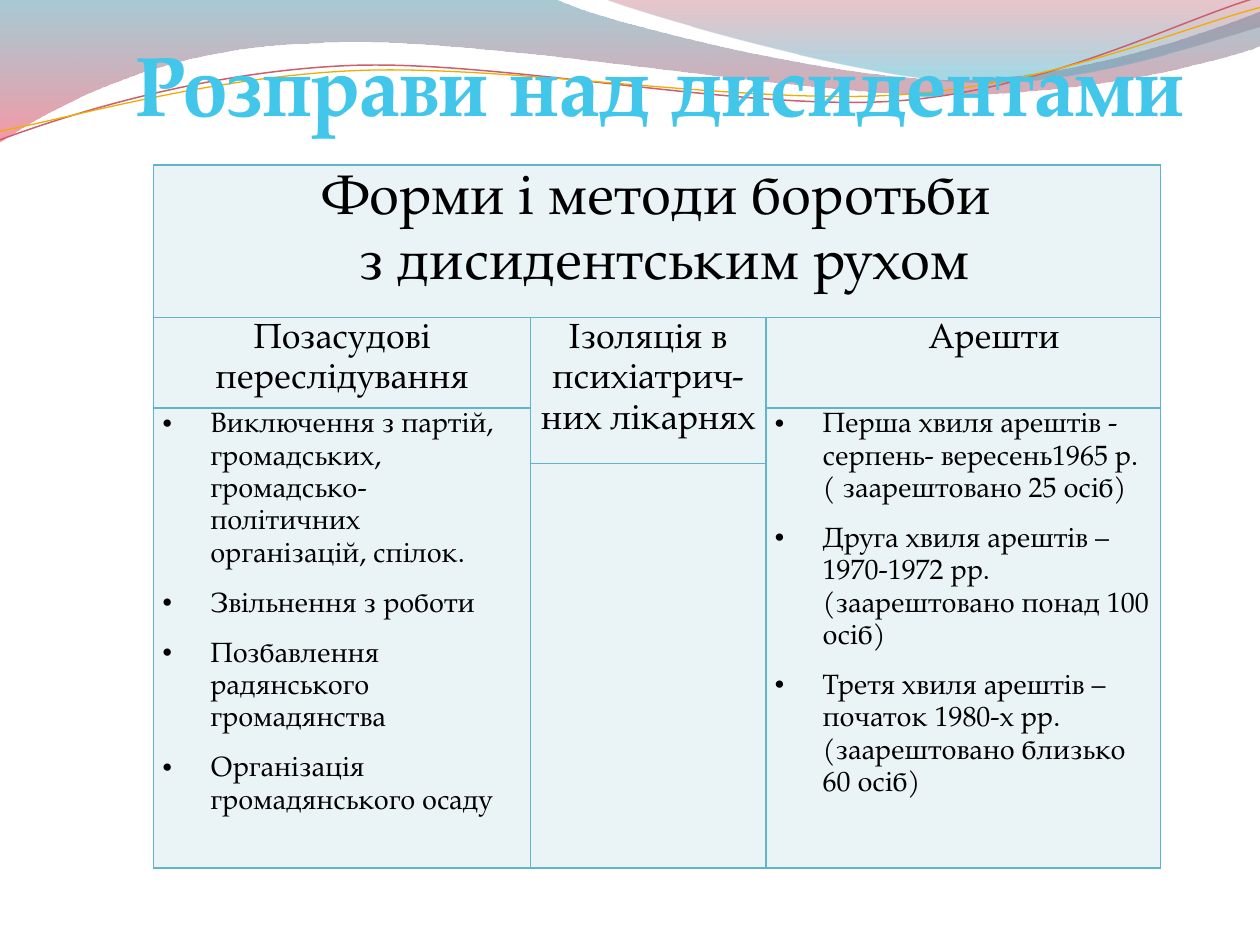
from dataclasses import dataclass
from math import cos, radians, sin

from lxml.etree import SubElement
from pptx import Presentation
from pptx.dml.color import RGBColor
from pptx.enum.text import MSO_ANCHOR, MSO_AUTO_SIZE, PP_ALIGN
from pptx.oxml.ns import qn
from pptx.util import Inches, Pt


@dataclass(frozen=True)
class Theme:
    font: str = "TeX Gyre Pagella"
    title: str = "42C6EA"
    text: str = "000000"
    cell: str = "EAF3F6"
    border: str = "60B5CC"
    title_size: int = 48
    heading_size: int = 32
    column_size: int = 20
    body_size: int = 16


THEME = Theme()
CURVE_TILT = -2.7
CURVE_CENTRE = (4.99, 0.58)

# Each outline is a start point followed by line ends (one point)
# or cubic curves (two control points and an end point).
LEFT_WAVE = [
    (0, 0), [(4.4, -0.01)],
    [(4.76, 0.17), (6.64, 0.63), (7.58, 0.63)],
    [(8.53, 0.63), (9.58, 0.26), (10, 0.09)], [(10.01, 0.36)],
    [(9.83, 0.44), (8.7, 0.76), (7.46, 0.75)],
    [(6.22, 0.75), (3.82, 0.28), (2.57, 0.34)],
    [(1.29, 0.36), (0.46, 0.83), (-0.01, 1.13)], [(0, 0)],
]
RIGHT_WAVE = [
    (4.79, -0.01),
    [(5.09, 0.11), (6.82, 0.62), (7.69, 0.65)],
    [(8.56, 0.69), (9.61, 0.32), (10, 0.21)], [(10, 0)], [(4.79, -0.01)],
]
RED_CURVE = [
    (0, 1.11),
    [(0.48, 0.93), (1.58, 0.57), (2.77, 0.52)],
    [(3.95, 0.47), (5.93, 0.89), (7.13, 0.8)],
    [(8.33, 0.71), (9.38, 0.15), (9.98, -0.02)],
]
GOLD_CURVE = [
    (0, 1.04),
    [(0.47, 0.96), (1.64, 0.61), (2.83, 0.56)],
    [(4.03, 0.51), (5.97, 0.84), (7.17, 0.75)],
    [(8.36, 0.67), (9.41, 0.21), (10, 0.06)],
]

COLUMN_WIDTHS = [2.99, 1.87, 3.13]
ROW_HEIGHTS = [1.21, 0.72, 0.44, 3.21]
MERGES = [((0, 0), (0, 2)), ((1, 1), (2, 1)), ((2, 0), (3, 0)), ((2, 2), (3, 2))]
HEADING = "Форми і методи боротьби\n з дисидентським рухом"
COLUMN_HEADINGS = [
    ("Позасудові переслідування", 0),
    ("Ізоляція в психіатрич-них лікарнях", 0),
    ("Арешти", 0.49),
]
PERSECUTIONS = [
    "Виключення з партій, громадських, громадсько- політичних організацій, спілок.",
    "Звільнення з роботи",
    "Позбавлення радянського громадянства",
    "Організація громадянського осаду",
]
ARRESTS = [
    "Перша хвиля арештів - серпень- вересень1965 р.\n( заарештовано 25 осіб)",
    "Друга хвиля арештів – 1970-1972 рр.(заарештовано понад 100 осіб)",
    "Третя хвиля арештів – початок 1980-х рр.(заарештовано близько 60 осіб)",
]


def rgb(value):
    return RGBColor.from_string(value)


def turn(point, degrees):
    """Turn a point clockwise about the centre of the thin curves."""
    angle = radians(degrees)
    x, y = (value - centre for value, centre in zip(point, CURVE_CENTRE))
    return (CURVE_CENTRE[0] + x * cos(angle) - y * sin(angle),
            CURVE_CENTRE[1] + x * sin(angle) + y * cos(angle))


def add_outline(shapes, outline, close=False, tilt=0):
    """Build a freeform, joining each segment of three points into a cubic curve."""
    points = [outline[0]] + [point for segment in outline[1:] for point in segment]
    points = [tuple(Inches(value) for value in turn(point, -tilt)) for point in points]
    builder = shapes.build_freeform(*points[0])
    builder.add_line_segments(points[1:], close=close)
    shape = builder.convert_to_shape()
    shape.rotation = tilt
    shape.shadow.inherit = False
    lines = iter(list(shape._element.iter(qn("a:lnTo"))))
    for segment in outline[1:]:
        parts = [next(lines) for _ in segment]
        if len(parts) == 3:
            curve = parts[0].makeelement(qn("a:cubicBezTo"))
            parts[0].addprevious(curve)
            for part in parts:
                curve.append(part[0])
                part.getparent().remove(part)
    return shape


def add_wave(shapes, outline, stops):
    """Add a filled wave; each stop is position, colour, opacity percent."""
    shape = add_outline(shapes, outline, close=True)
    shape.line.fill.background()
    shape.fill.gradient()
    shape.fill.gradient_angle = 270
    for stop, (position, colour, _) in zip(shape.fill.gradient_stops, stops):
        stop.position = position
        stop.color.rgb = rgb(colour)
    colours = shape._element.spPr.iter(qn("a:srgbClr"))
    for element, (_, _, opacity) in zip(list(colours), stops):
        SubElement(element, qn("a:alpha"), val=str(opacity * 1000))


def add_curve(shapes, outline, colour, width):
    shape = add_outline(shapes, outline, tilt=CURVE_TILT)
    shape.fill.background()
    shape.line.color.rgb = rgb(colour)
    shape.line.width = Pt(width)


def write_text(paragraph, text, *, size, colour=THEME.text, bold=False,
               align=PP_ALIGN.LEFT, line_spacing=None, space_after=None,
               spacing=None, left=0, bullet=False):
    properties = paragraph._p.get_or_add_pPr()
    if bullet:
        SubElement(properties, qn("a:buChar"), char="•")
    if left:
        properties.set("marL", str(Inches(left)))
        properties.set("indent", str(-Inches(left) if bullet else 0))
    paragraph.alignment = align
    paragraph.line_spacing = line_spacing
    paragraph.space_after = space_after
    paragraph.text = text
    for run in paragraph.runs:
        run.font.name = THEME.font
        run.font.size = Pt(size)
        run.font.bold = bold
        run.font.color.rgb = rgb(colour)
        if spacing:
            run.font._element.set("spc", str(int(spacing * 100)))


def style_cell(cell):
    cell.margin_left = cell.margin_right = Inches(0.07)
    cell.margin_top = cell.margin_bottom = 0
    properties = cell._tc.get_or_add_tcPr()
    for side in ("lnL", "lnR", "lnT", "lnB"):
        border = SubElement(properties, qn(f"a:{side}"), w=str(Pt(1)))
        fill = SubElement(border, qn("a:solidFill"))
        SubElement(fill, qn("a:srgbClr"), val=THEME.border)
    cell.fill.solid()
    cell.fill.fore_color.rgb = rgb(THEME.cell)


def fill_cell(cell, texts, **text_format):
    frame = cell.text_frame
    for index, text in enumerate(texts):
        paragraph = frame.add_paragraph() if index else frame.paragraphs[0]
        write_text(paragraph, text, line_spacing=1.15, space_after=Pt(10), **text_format)


def add_methods_table(slide):
    frame = slide.shapes.add_table(
        len(ROW_HEIGHTS), len(COLUMN_WIDTHS), Inches(1.22), Inches(1.31),
        Inches(sum(COLUMN_WIDTHS)), Inches(sum(ROW_HEIGHTS)))
    table = frame.table
    table.first_row = table.horz_banding = False
    for column, width in zip(table.columns, COLUMN_WIDTHS):
        column.width = Inches(width)
    for row, height in zip(table.rows, ROW_HEIGHTS):
        row.height = Inches(height)
    for cell in table.iter_cells():
        style_cell(cell)
    for first, last in MERGES:
        table.cell(*first).merge(table.cell(*last))
    fill_cell(table.cell(0, 0), [HEADING], size=THEME.heading_size, align=PP_ALIGN.CENTER)
    for column, (text, left) in enumerate(COLUMN_HEADINGS):
        fill_cell(table.cell(1, column), [text], size=THEME.column_size,
                  align=PP_ALIGN.CENTER, left=left)
    for column, items in ((0, PERSECUTIONS), (2, ARRESTS)):
        fill_cell(table.cell(2, column), items, size=THEME.body_size, left=0.38, bullet=True)


def place_title(slide, text):
    """Format the title placeholder and bring it to the front."""
    title = slide.shapes.title
    title.left, title.top = Inches(0.56), Inches(0.21)
    title.width, title.height = Inches(9.37), Inches(0.91)
    frame = title.text_frame
    frame.word_wrap = False
    frame.auto_size = MSO_AUTO_SIZE.SHAPE_TO_FIT_TEXT
    frame.vertical_anchor = MSO_ANCHOR.TOP
    write_text(frame.paragraphs[0], text, size=THEME.title_size, colour=THEME.title,
               bold=True, align=PP_ALIGN.CENTER, spacing=0.5)
    slide.shapes._spTree.append(title._element)


def main():
    presentation = Presentation()
    presentation.slide_width, presentation.slide_height = Inches(10), Inches(7.5)
    slide = presentation.slides.add_slide(presentation.slide_layouts[5])
    add_wave(slide.shapes, LEFT_WAVE, [(0, "3F8A9F", 45), (1, "EF445B", 55)])
    add_wave(slide.shapes, RIGHT_WAVE, [(0, "B84253", 30), (0.8, "42ABC7", 45)])
    curves = slide.shapes.add_group_shape().shapes
    add_curve(curves, RED_CURVE, "CB5F6E", 0.85)
    add_curve(curves, GOLD_CURVE, "F0AD00", 0.75)
    add_methods_table(slide)
    place_title(slide, "Розправи над дисидентами")
    presentation.save("out.pptx")


if __name__ == "__main__":
    main()
